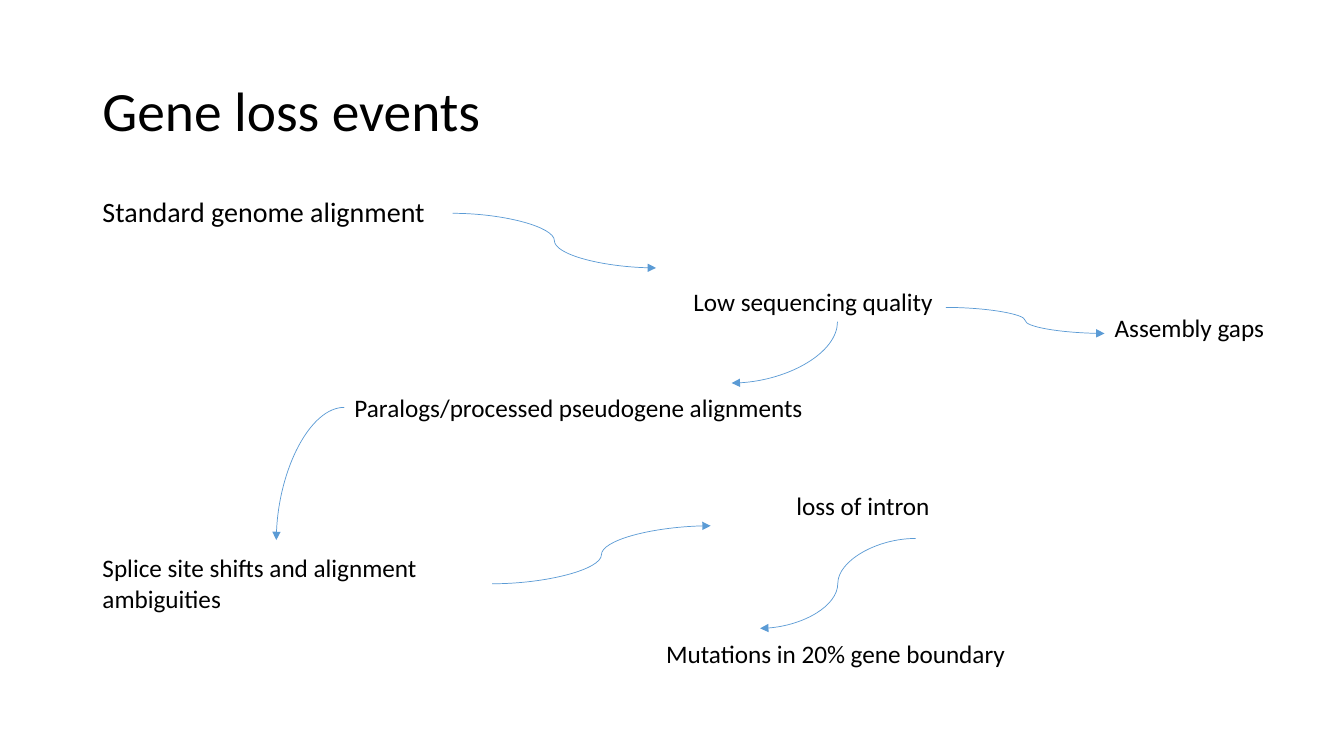
from dataclasses import dataclass

from lxml import etree
from pptx import Presentation
from pptx import util as u
from pptx.dml import color
from pptx.enum import shapes, text
from pptx.oxml import ns

WIDE, HIGH = u.Inches(13.333), u.Inches(7.5)
COLS, ROWS = 160, 90
INK, BLUE = "000000", "5B9BD5"


@dataclass
class Note:
    """A line of text, placed in columns and rows."""
    words: str
    x: float
    y: float
    w: float
    h: float = 4.85
    pad: float = 1.2


@dataclass
class Link:
    """A curved arrow between two grid points."""
    x1: float
    y1: float
    x2: float
    y2: float
    bend: int = 3
    turn: bool = False


TITLE = Note("Gene loss events", 11, 4.8, 138, 17.4)
BODY = Note("Standard genome alignment", 11, 23, 138, 57.1)
NOTES = [
    Note("Low sequencing quality", 80, 33.5, 39.4, pad=2.55),
    Note("Paralogs/processed pseudogene alignments", 41, 46.1, 80),
    Note("Splice site shifts and alignment ambiguities", 11, 65.2, 44.5, 8.8),
    Note("Mutations in 20% gene boundary", 78.1, 75.4, 46.8),
    Note("Assembly gaps", 131.5, 36.6, 24.2),
    Note("loss of intron", 93.6, 57.8, 53.3),
]
LINKS = [
    Link(53.9, 25.4, 78.1, 31.9),
    Link(99.7, 38.3, 87.1, 45.6, bend=2, turn=True),
    Link(41, 48.5, 32.9, 64.3, bend=2),
    Link(58.6, 69.5, 84.6, 62.6),
    Link(112.6, 36.6, 131.5, 39.7),
    Link(109, 64.1, 90.5, 74.8),
]


def col(n: float) -> int:
    """Turn columns into a length."""
    return round(WIDE * n / COLS)


def row(n: float) -> int:
    """Turn rows into a length."""
    return round(HIGH * n / ROWS)


def paint(target, code: str) -> None:
    """Set a colour from a hex string."""
    target.rgb = color.RGBColor.from_string(code)


def write(box, note: Note, size: float):
    """Place a box, fill in its words and return the paragraph."""
    box.left, box.top = col(note.x), row(note.y)
    box.width, box.height = col(note.w), row(note.h)
    frame = box.text_frame
    frame.word_wrap = True
    frame.margin_left = col(note.pad)
    frame.text = note.words
    para = frame.paragraphs[0]
    para.alignment = text.PP_ALIGN.LEFT
    para.font.name, para.font.size = "Calibri", u.Pt(size)
    paint(para.font.color, INK)
    return para


def head(slide) -> None:
    """Fill the title and body placeholders."""
    title, body = slide.shapes.title, slide.placeholders[1]
    write(title, TITLE, 39.6).line_spacing = 0.9
    title.text_frame.vertical_anchor = text.MSO_ANCHOR.MIDDLE
    para = write(body, BODY, 20)
    para.line_spacing, para.space_before = 0.9, u.Pt(10)
    props = para._p.get_or_add_pPr()
    props.set("marL", "0")
    props.set("indent", "0")
    etree.SubElement(props, ns.qn("a:buNone"))


def join(slide, link: Link) -> None:
    """Draw one curved arrow, turned a quarter if it starts downwards."""
    mid_x, mid_y = col(link.x1 + link.x2) // 2, row(link.y1 + link.y2) // 2
    dx, dy = col(link.x1) - mid_x, row(link.y1) - mid_y
    if link.turn:
        dx, dy = dy, -dx
    line = slide.shapes.add_connector(
        shapes.MSO_CONNECTOR.CURVE, mid_x + dx, mid_y + dy, mid_x - dx, mid_y - dy)
    paint(line.line.color, BLUE)
    line.line.width = u.Pt(0.5)
    props = line._element.spPr
    props.find(ns.qn("a:prstGeom")).set("prst", f"curvedConnector{link.bend}")
    if link.turn:
        props.find(ns.qn("a:xfrm")).set("rot", str(90 * 60000))
    etree.SubElement(props.find(ns.qn("a:ln")), ns.qn("a:tailEnd"), type="triangle")
    etree.SubElement(props, ns.qn("a:effectLst"))


def main() -> None:
    """Build and save the slide."""
    deck = Presentation()
    deck.slide_width, deck.slide_height = WIDE, HIGH
    slide = deck.slides.add_slide(deck.slide_layouts[1])
    head(slide)
    for note in NOTES:
        write(slide.shapes.add_textbox(0, 0, 0, 0), note, 18)
    for link in LINKS:
        join(slide, link)
    deck.save("out.pptx")


if __name__ == "__main__":
    main()
